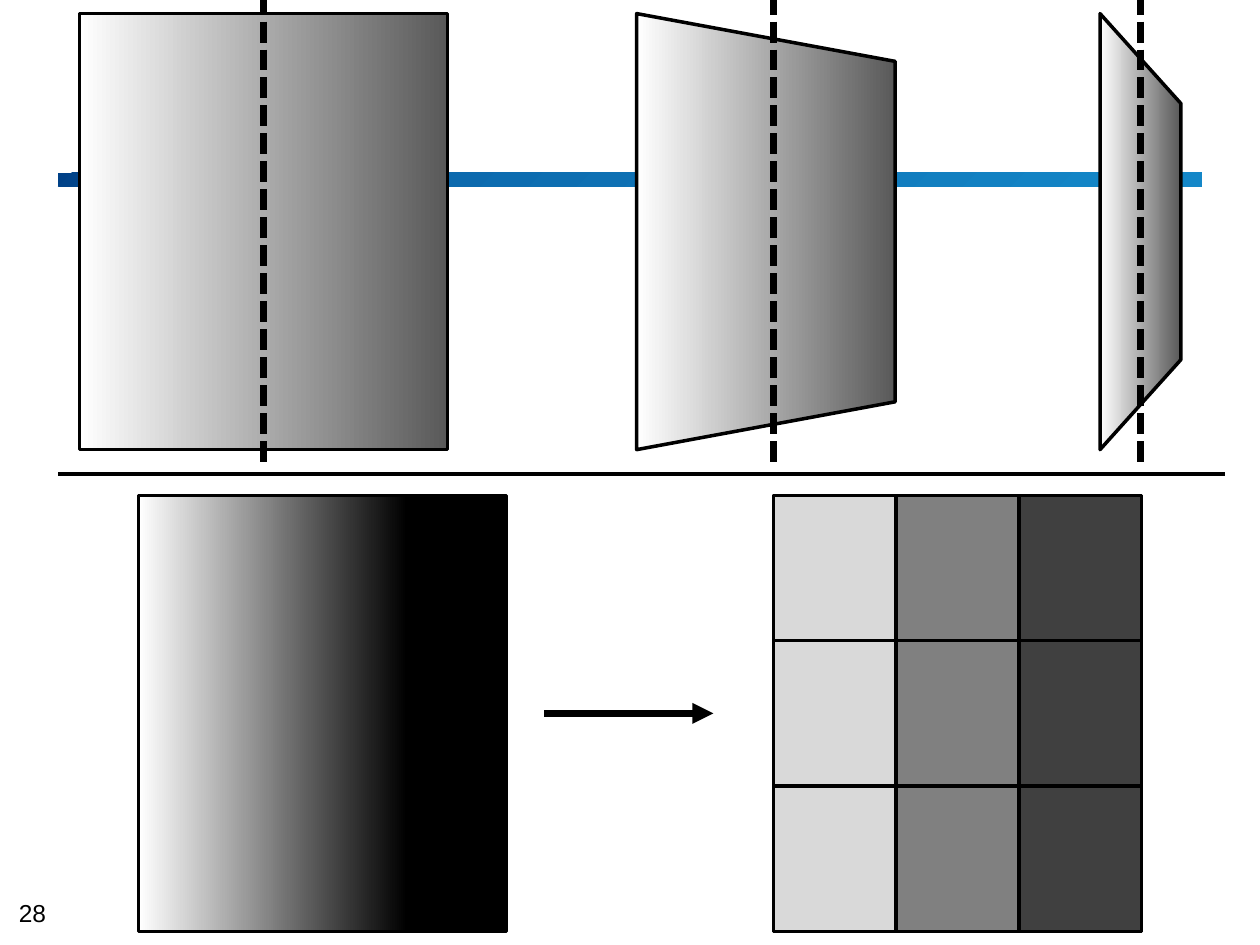
from lxml import etree
from pptx import Presentation
from pptx.dml.color import RGBColor
from pptx.enum.dml import MSO_LINE
from pptx.enum.shapes import MSO_CONNECTOR, MSO_SHAPE
from pptx.enum.text import MSO_ANCHOR
from pptx.oxml.ns import qn
from pptx.util import Cm, Pt

TRAPEZOID = MSO_SHAPE.TRAPEZOID
RECTANGLE = MSO_SHAPE.RECTANGLE
STRAIGHT = MSO_CONNECTOR.STRAIGHT
DASHED = MSO_LINE.SQUARE_DOT
BOTTOM = MSO_ANCHOR.BOTTOM

BLACK = "000000"
PANEL_WIDTH = 7.42
PANEL_HEIGHT = 8.79
UPPER_MIDDLE = 4.67
LOWER_MIDDLE = 14.38
GRID_CENTER = 19.3
GRID_SIZE = 3
SHADED = [(0, "595959"), (100, "FFFFFF")]
SATURATED = [(0, BLACK), (27, BLACK), (100, "FFFFFF")]
BLUES = [(0, "004187"), (21, "0A64A8"), (96, "1487C8")]


def color(value):
    return RGBColor.from_string(value)


def fill_solid(shape, value, opacity=100):
    shape.fill.solid()
    shape.fill.fore_color.rgb = color(value)
    if opacity < 100:
        tone = shape._element.spPr.find(qn("a:solidFill")).find(qn("a:srgbClr"))
        etree.SubElement(tone, qn("a:alpha"), val=str(opacity * 1000))


def fill_gradient(shape, stops, angle):
    shape.fill.gradient()
    shape.fill.gradient_angle = angle
    stop_list = shape._element.spPr.find(qn("a:gradFill")).find(qn("a:gsLst"))
    for old_stop in list(stop_list):
        stop_list.remove(old_stop)
    for position, value in stops:
        stop = etree.SubElement(stop_list, qn("a:gs"), pos=str(position * 1000))
        etree.SubElement(stop, qn("a:srgbClr"), val=value)


def add_panel(slide, center, middle, width, height, taper=0):
    panel = slide.shapes.add_shape(
        TRAPEZOID, Cm(center - height / 2), Cm(middle - width / 2), Cm(height), Cm(width)
    )
    panel.rotation = 90
    panel.adjustments[0] = taper
    panel.shadow.inherit = False
    panel.line.color.rgb = color(BLACK)
    panel.line.width = Pt(2)
    return panel


def add_line(slide, start, end, width, dash=None, arrow=False):
    line = slide.shapes.add_connector(STRAIGHT, *map(Cm, start + end))
    line.line.color.rgb = color(BLACK)
    line.line.width = Pt(width)
    if dash is not None:
        line.line.dash_style = dash
    if arrow:
        etree.SubElement(line.line._get_or_add_ln(), qn("a:tailEnd"), type="triangle")
    etree.SubElement(line._element.spPr, qn("a:effectLst"))


def add_page_number(slide, number):
    page = slide.shapes.add_textbox(Cm(0.25), Cm(18.11), Cm(0.87), Cm(0.58))
    frame = page.text_frame
    frame.margin_left = Cm(0.13)
    frame.margin_top = frame.margin_right = frame.margin_bottom = 0
    frame.vertical_anchor = BOTTOM
    frame.word_wrap = False
    run = frame.paragraphs[0].add_run()
    run.text = number
    run.font.name = "Arial"
    run.font.size = Pt(14)
    run.font.color.rgb = color(BLACK)


def add_blue_bar(slide):
    bar = slide.shapes.add_shape(RECTANGLE, Cm(1.17), Cm(3.48), Cm(23.06), Cm(0.28))
    bar.shadow.inherit = False
    bar.line.fill.background()
    fill_gradient(bar, BLUES, 315)


def add_pixel_grid(slide):
    backing = add_panel(slide, GRID_CENTER, LOWER_MIDDLE, PANEL_WIDTH, PANEL_HEIGHT)
    fill_solid(backing, "FFFFFF")
    cell_width = PANEL_WIDTH / GRID_SIZE
    cell_height = PANEL_HEIGHT / GRID_SIZE
    tones = [("D9D9D9", 100), ("808080", 100), (BLACK, 75)]
    for column, (tone, opacity) in enumerate(tones):
        for row in range(GRID_SIZE):
            center = GRID_CENTER + (column - 1) * cell_width
            middle = LOWER_MIDDLE + (row - 1) * cell_height
            pixel = add_panel(slide, center, middle, cell_width, cell_height)
            fill_solid(pixel, tone, opacity)


def main():
    presentation = Presentation()
    presentation.slide_width = Cm(25.4)
    presentation.slide_height = Cm(19.05)
    slide = presentation.slides.add_slide(presentation.slide_layouts[6])

    add_page_number(slide, "28")
    add_blue_bar(slide)

    turned_panels = [(5.31, PANEL_WIDTH, 0), (15.44, 5.21, 0.185), (22.99, 1.63, 1.112)]
    for center, width, taper in turned_panels:
        panel = add_panel(slide, center, UPPER_MIDDLE, width, PANEL_HEIGHT, taper)
        fill_gradient(panel, SHADED, 270)

    continuous = add_panel(slide, 6.5, LOWER_MIDDLE, PANEL_WIDTH, PANEL_HEIGHT)
    fill_gradient(continuous, SATURATED, 270)
    add_pixel_grid(slide)

    add_line(slide, (1.17, 9.55), (24.69, 9.55), 2)
    for axis in (5.31, 15.6, 22.99):
        add_line(slide, (axis, -0.13), (axis, 9.43), 4, dash=DASHED)
    add_line(slide, (10.97, LOWER_MIDDLE), (14.38, LOWER_MIDDLE), 4, arrow=True)

    presentation.save("out.pptx")


if __name__ == "__main__":
    main()
